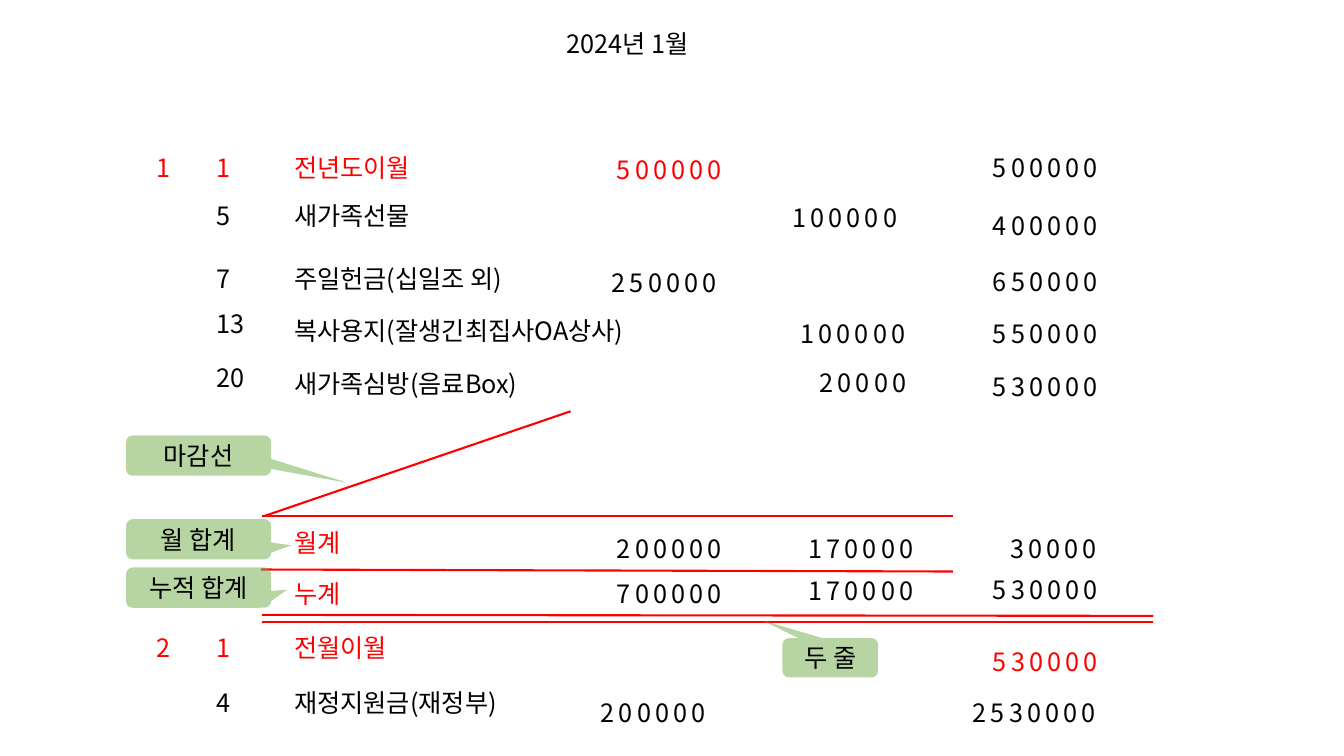
from lxml import etree
from pptx import Presentation
from pptx.dml.color import RGBColor
from pptx.enum.shapes import MSO_CONNECTOR, MSO_SHAPE
from pptx.enum.text import MSO_ANCHOR, MSO_AUTO_SIZE, PP_ALIGN
from pptx.oxml.ns import qn
from pptx.util import Inches, Pt

STRAIGHT = MSO_CONNECTOR.STRAIGHT
CALLOUT = MSO_SHAPE.ROUNDED_RECTANGULAR_CALLOUT
TOP, MIDDLE = MSO_ANCHOR.TOP, MSO_ANCHOR.MIDDLE
LEFT, CENTER = PP_ALIGN.LEFT, PP_ALIGN.CENTER
TITLE_ONLY = 5

COLOURS = {"entry": "000000", "carried": "FF0000", "rule": "FF0000", "callout": "70AD47"}
FONT = "Noto Sans CJK KR"
CELL_HEIGHT = 0.4
FRAME = {"word_wrap": True, "auto_size": MSO_AUTO_SIZE.NONE}

# Column: offset from the left of the ledger, width, letter spacing in points
COLUMNS = {
    "month": (0, 0.48, 0),
    "day": (0.6, 0.64, 0),
    "item": (1.37, 4.06, 0),
    "income": (4.57, 1.53, 3),
    "expense": (6.39, 1.53, 3),
    "balance": (8.3, 1.53, 3),
}

# Cell: column, text, offset from the top of the section, colour, shift to the right
JANUARY = [
    ("month", "1", 0, "carried", 0),
    ("day", "1", 0, "carried", 0),
    ("item", "전년도이월", 0, "carried", 0),
    ("income", "500000", 0.02, "carried", 0),
    ("balance", "500000", 0, "entry", 0),
    ("day", "5", 0.48, "entry", 0),
    ("item", "새가족선물", 0.48, "entry", 0),
    ("expense", "100000", 0.5, "entry", -0.08),
    ("balance", "400000", 0.58, "entry", 0),
    ("day", "7", 1.1, "entry", 0),
    ("item", "주일헌금(십일조 외)", 1.1, "entry", 0),
    ("income", "250000", 1.14, "entry", -0.05),
    ("balance", "650000", 1.13, "entry", 0),
    ("day", "13", 1.55, "entry", 0),
    ("item", "복사용지(잘생긴최집사OA상사)", 1.62, "entry", 0),
    ("expense", "100000", 1.65, "entry", 0),
    ("balance", "550000", 1.65, "entry", 0),
    ("day", "20", 2.09, "entry", 0),
    ("item", "새가족심방(음료Box)", 2.14, "entry", 0),
    ("expense", "20000", 2.13, "entry", 0.19),
    ("balance", "530000", 2.17, "entry", 0),
]
TOTALS = [
    ("item", "월계", 0, "carried", 0),
    ("income", "200000", 0.06, "entry", 0),
    ("expense", "170000", 0.06, "entry", 0.08),
    ("balance", "30000", 0.06, "entry", 0.17),
    ("item", "누계", 0.51, "carried", 0),
    ("income", "700000", 0.51, "entry", 0),
    ("expense", "170000", 0.48, "entry", 0.08),
    ("balance", "530000", 0.47, "entry", 0),
]
FEBRUARY = [
    ("month", "2", 0, "carried", 0),
    ("day", "1", 0, "carried", 0),
    ("item", "전월이월", 0, "carried", 0),
    ("balance", "530000", 0.14, "carried", 0),
    ("day", "4", 0.55, "entry", 0),
    ("item", "재정지원금(재정부)", 0.55, "entry", 0),
    ("income", "200000", 0.65, "entry", -0.16),
    ("balance", "2530000", 0.65, "entry", -0.2),
]

# Start and end of each rule, from the corner where the closing line begins
RULES = [
    ((3.06, -1.04), (0.02, 0)),
    ((6.85, 0), (0, 0)),
    ((6.85, 0.55), (-0.01, 0.53)),
    ((8.84, 0.99), (0, 0.98)),
    ((8.84, 1.05), (0, 1.05)),
]

# Text, offset from the first callout, size, pointer position
CALLOUTS = [
    ("마감선", (0, 0), (1.44, 0.4), (1.03, 0.68)),
    ("월 합계", (0, 0.83), (1.44, 0.4), (0.64, 0.15)),
    ("누적 합계", (0, 1.31), (1.44, 0.4), (0.61, 0.05)),
    ("두 줄", (6.51, 2.01), (0.95, 0.39), (-0.71, -0.95)),
]


def colour(name):
    return RGBColor.from_string(COLOURS[name])


def write(frame, text, ink="entry", spacing=0, anchor=TOP, align=LEFT):
    for name, value in {**FRAME, "vertical_anchor": anchor}.items():
        setattr(frame, name, value)
    para = frame.paragraphs[0]
    para.alignment = align
    para.line_spacing = 1.0
    span = para.add_run()
    span.text = text
    for name, value in {"name": FONT, "size": Pt(18), "bold": False}.items():
        setattr(span.font, name, value)
    span.font.color.rgb = colour(ink)
    properties = span.font._element if hasattr(span.font, "_element") else span._r.get_or_add_rPr()
    etree.SubElement(properties, qn("a:ea")).set("typeface", FONT)
    if spacing:
        properties.set("spc", str(spacing * 100))


def add_title(page, left, top, width, height):
    title = page.shapes.title
    for name, value in {"left": left, "top": top, "width": width, "height": height}.items():
        setattr(title, name, Inches(value))
    write(title.text_frame, "2024년 1월")


def add_section(page, left, top, cells):
    """Place ledger cells in their columns."""
    for column, text, drop, ink, shift in cells:
        offset, width, spacing = COLUMNS[column]
        box = page.shapes.add_textbox(
            Inches(left + offset + shift), Inches(top + drop), Inches(width), Inches(CELL_HEIGHT)
        )
        write(box.text_frame, text, ink, spacing)


def add_rules(page, left, top):
    for (start_x, start_y), (end_x, end_y) in RULES:
        rule = page.shapes.add_connector(
            STRAIGHT,
            Inches(left + start_x), Inches(top + start_y),
            Inches(left + end_x), Inches(top + end_y),
        )
        rule.line.color.rgb = colour("rule")
        rule.line.width = Pt(1.5)
        etree.SubElement(rule._element.spPr, qn("a:effectLst"))


def add_callouts(page, left, top):
    for text, (across, down), (width, height), pointer in CALLOUTS:
        callout = page.shapes.add_shape(
            CALLOUT, Inches(left + across), Inches(top + down), Inches(width), Inches(height)
        )
        callout.shadow.inherit = False
        for index, value in enumerate(pointer):
            callout.adjustments[index] = value
        callout.fill.solid()
        callout.fill.fore_color.rgb = colour("callout")
        tint = callout._element.spPr.find(qn("a:solidFill"))[0]
        etree.SubElement(tint, qn("a:alpha")).set("val", "50000")
        callout.line.fill.background()
        write(callout.text_frame, text, anchor=MIDDLE, align=CENTER)


def main():
    deck = Presentation()
    deck.slide_width, deck.slide_height = Inches(13.33), Inches(7.5)
    page = deck.slides.add_slide(deck.slide_layouts[TITLE_ONLY])
    add_title(page, 5.52, 0.23, 1.74, CELL_HEIGHT)
    add_section(page, 1.45, 1.46, JANUARY)
    add_rules(page, 2.6, 5.12)
    add_section(page, 1.45, 5.18, TOTALS)
    add_section(page, 1.45, 6.22, FEBRUARY)
    add_callouts(page, 1.25, 4.32)
    deck.save("out.pptx")


if __name__ == "__main__":
    main()
